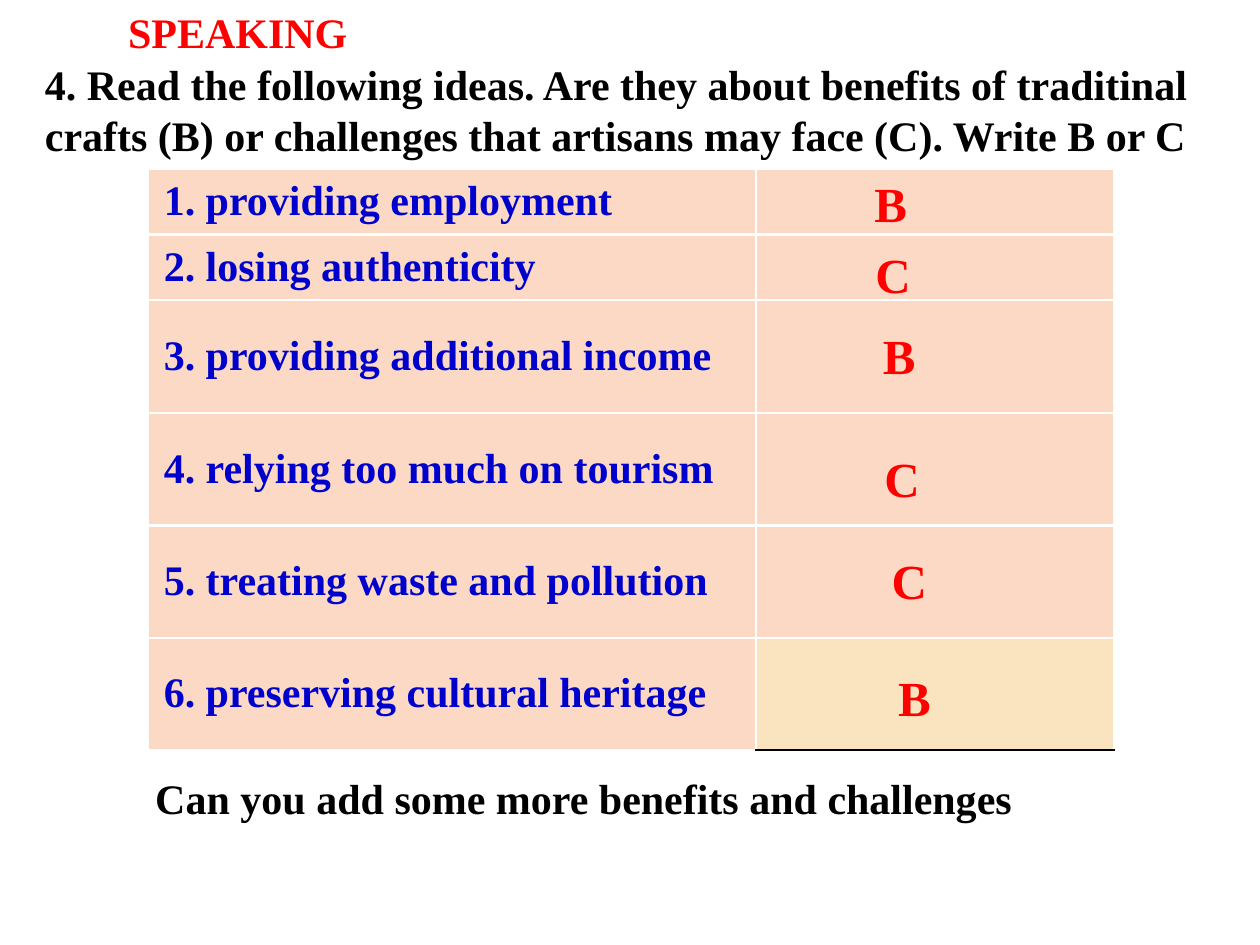
from typing import NamedTuple

from lxml import etree
from pptx import Presentation
from pptx.dml.color import RGBColor
from pptx.enum.text import MSO_ANCHOR, MSO_AUTO_SIZE, PP_ALIGN
from pptx.oxml.ns import qn
from pptx.util import Pt

TOP, MIDDLE = MSO_ANCHOR.TOP, MSO_ANCHOR.MIDDLE
LEFT = PP_ALIGN.LEFT
GROW = MSO_AUTO_SIZE.SHAPE_TO_FIT_TEXT
TITLE_ONLY = 5

FONT = "Times New Roman"
RED, BLUE, BLACK, WHITE = "FF0000", "0000CC", "000000", "FFFFFF"
PEACH, CREAM = "FBD9C4", "F9E4BF"
BODY_SIZE, ANSWER_SIZE = 24, 28
COLUMN_WIDTHS = (347.8, 204.4)


class Box(NamedTuple):
    left: float
    top: float
    width: float
    height: float


class Idea(NamedTuple):
    text: str
    row_height: float
    answer: str
    answer_box: Box
    answer_fill: str = PEACH
    answer_bottom: str = WHITE


IDEAS = (
    Idea("1. providing employment", 37.4, "B", Box(492.5, 95.8, 84, 41)),
    Idea("2. losing authenticity", 37.4, "C", Box(493.2, 136, 102, 41)),
    Idea("3. providing additional income", 64.8, "B", Box(497.5, 182.2, 81, 41)),
    Idea("4. relying too much on tourism", 64.1, "C", Box(498.3, 252.7, 81, 41)),
    Idea("5. treating waste and pollution", 64.1, "C", Box(502.5, 311, 81, 41)),
    Idea("6. preserving cultural heritage", 64.1, "B", Box(506.2, 378, 81, 41),
         CREAM, BLACK),
)


def rgb(color: str) -> RGBColor:
    return RGBColor.from_string(color)


def add_run(paragraph, text: str, size: float, color: str) -> None:
    run = paragraph.add_run()
    run.text = text
    font = run.font
    font.name, font.size, font.bold = FONT, Pt(size), True
    font.color.rgb = rgb(color)


def fill_frame(frame, text: str, size: float, color: str, wrap: bool = True) -> None:
    frame.word_wrap = wrap
    frame.auto_size = GROW
    frame.vertical_anchor = TOP
    paragraph = frame.paragraphs[0]
    paragraph.alignment = LEFT
    add_run(paragraph, text, size, color)


def add_text(slide, box: Box, text: str, size: float, color: str) -> None:
    textbox = slide.shapes.add_textbox(*map(Pt, box))
    fill_frame(textbox.text_frame, text, size, color)


def place_title(slide, box: Box, text: str) -> None:
    title = slide.shapes.title
    title.left, title.top, title.width, title.height = map(Pt, box)
    fill_frame(title.text_frame, text, BODY_SIZE, RED, wrap=False)


def style_cell(cell, fill: str, bottom: str = WHITE) -> None:
    """Set the four borders, then the fill, in the order the schema requires."""
    properties = cell._tc.get_or_add_tcPr()
    borders = {"a:lnL": WHITE, "a:lnR": WHITE, "a:lnT": WHITE, "a:lnB": bottom}
    for tag, color in borders.items():
        line = etree.SubElement(properties, qn(tag), w=str(Pt(1.5)))
        solid = etree.SubElement(line, qn("a:solidFill"))
        etree.SubElement(solid, qn("a:srgbClr"), val=color)
    cell.fill.solid()
    cell.fill.fore_color.rgb = rgb(fill)


def add_ideas_table(slide, left: float, top: float) -> None:
    width = sum(COLUMN_WIDTHS)
    height = sum(idea.row_height for idea in IDEAS)
    table = slide.shapes.add_table(
        len(IDEAS), len(COLUMN_WIDTHS), Pt(left), Pt(top), Pt(width), Pt(height)
    ).table
    table.first_row = table.horz_banding = False
    for column, column_width in zip(table.columns, COLUMN_WIDTHS):
        column.width = Pt(column_width)
    for row, idea in zip(table.rows, IDEAS):
        row.height = Pt(idea.row_height)
        idea_cell, answer_cell = row.cells
        style_cell(idea_cell, PEACH)
        style_cell(answer_cell, idea.answer_fill, idea.answer_bottom)
        idea_cell.vertical_anchor = MIDDLE
        idea_cell.margin_left = idea_cell.margin_right = Pt(9.2)
        add_run(idea_cell.text_frame.paragraphs[0], idea.text, BODY_SIZE, BLUE)


def main() -> None:
    deck = Presentation()
    deck.slide_width, deck.slide_height = Pt(720), Pt(540)
    slide = deck.slides.add_slide(deck.slide_layouts[TITLE_ONLY])

    place_title(slide, Box(66, 0, 141, 36), "SPEAKING")
    add_text(
        slide, Box(18.6, 30, 679, 65.5),
        "4. Read the following ideas. Are they about benefits of traditinal "
        "crafts (B) or challenges that artisans may face (C). Write B or C",
        BODY_SIZE, BLACK,
    )
    add_ideas_table(slide, 84.4, 96.6)
    for idea in IDEAS:
        add_text(slide, idea.answer_box, idea.answer, ANSWER_SIZE, RED)
    add_text(
        slide, Box(81.6, 438, 552, 36),
        "Can you add some more benefits and challenges", BODY_SIZE, BLACK,
    )
    deck.save("out.pptx")


if __name__ == "__main__":
    main()
